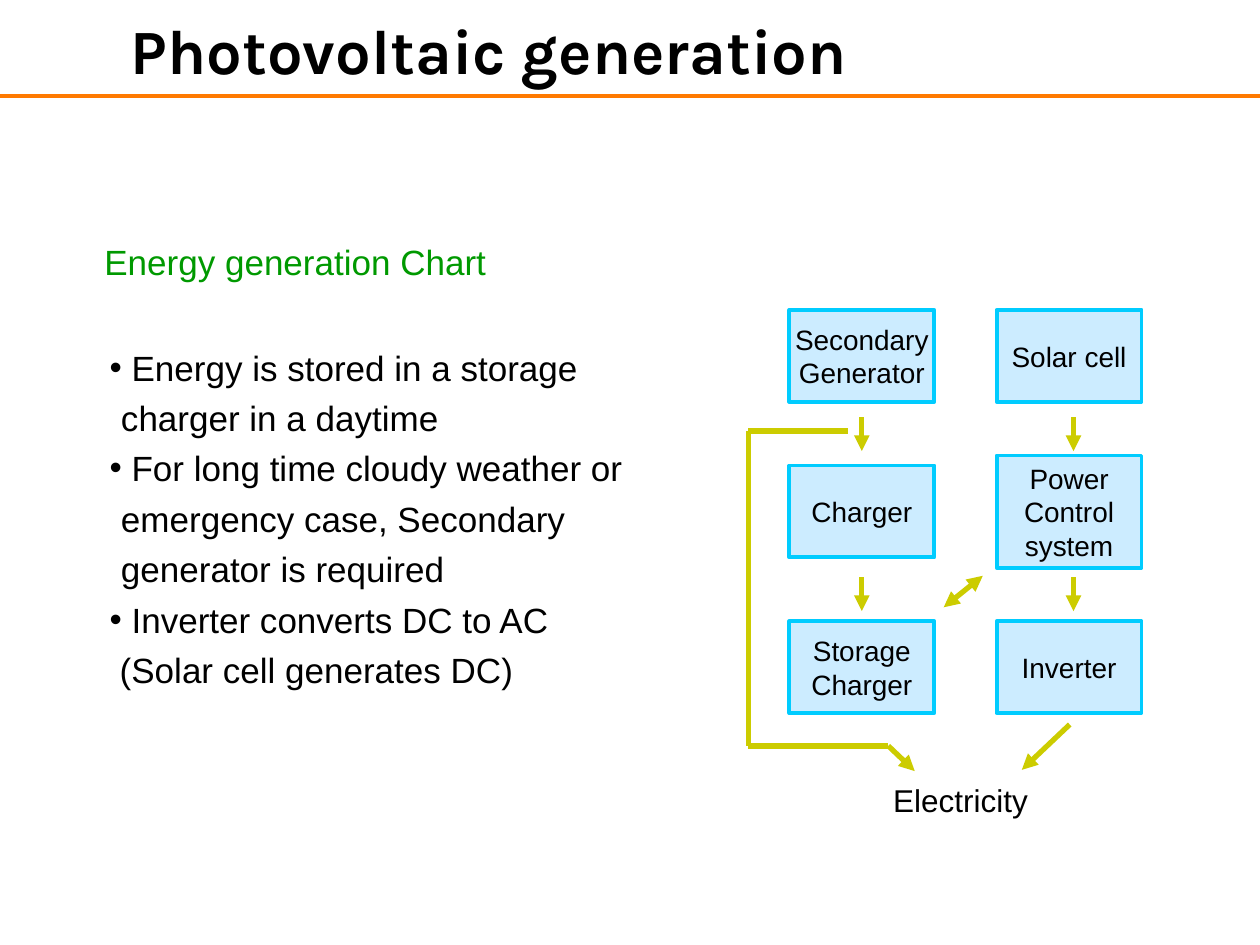
from dataclasses import dataclass

from lxml import etree
from pptx import Presentation
from pptx.dml.color import RGBColor
from pptx.enum.shapes import MSO_CONNECTOR, MSO_SHAPE
from pptx.enum.text import MSO_ANCHOR, MSO_AUTO_SIZE, PP_ALIGN
from pptx.oxml.ns import qn
from pptx.util import Inches, Pt

STRAIGHT = MSO_CONNECTOR.STRAIGHT
RECTANGLE = MSO_SHAPE.RECTANGLE
MIDDLE, TOP = MSO_ANCHOR.MIDDLE, MSO_ANCHOR.TOP
CENTER, LEFT = PP_ALIGN.CENTER, PP_ALIGN.LEFT
NO_FIT = MSO_AUTO_SIZE.NONE


@dataclass(frozen=True)
class Theme:
    title_font: str = "Karla"
    font: str = "Arial"
    text: str = "000000"
    heading: str = "009900"
    rule: str = "FF7A00"
    node_fill: str = "CCECFF"
    node_line: str = "00CCFF"
    arrow: str = "CCCC00"
    title_size: float = 36
    body_size: float = 20
    result_size: float = 18
    node_size: float = 16


THEME = Theme()


def place(shape, box):
    shape.left, shape.top, shape.width, shape.height = map(Inches, box)


def style(para, size, color=THEME.text, font=THEME.font, bold=False, align=LEFT):
    para.alignment = align
    para.font.name, para.font.size, para.font.bold = font, Pt(size), bold
    para.font.color.rgb = RGBColor.from_string(color)


def add_line(page, start, end, color, width, ends=()):
    """Straight line; ends may hold headEnd and tailEnd for arrowheads."""
    line = page.shapes.add_connector(STRAIGHT, *map(Inches, (*start, *end)))
    line.line.color.rgb = RGBColor.from_string(color)
    line.line.width = Pt(width)
    for end_name in ends:
        etree.SubElement(line.line._get_or_add_ln(), qn(f"a:{end_name}"), type="triangle")
    etree.SubElement(line._element.spPr, qn("a:effectLst"))


def add_title(page, box, page_width):
    left, top, width, height = box
    title = page.shapes.title
    place(title, box)
    frame = title.text_frame
    frame.text = "Photovoltaic generation"
    frame.vertical_anchor, frame.auto_size = MIDDLE, NO_FIT
    style(frame.paragraphs[0], THEME.title_size, font=THEME.title_font, bold=True, align=CENTER)
    rule_y = top + height - 0.03
    add_line(page, (0, rule_y), (page_width, rule_y), THEME.rule, 2)


def add_notes_column(page, box):
    left, top, width, height = box

    # Heading
    heading = page.shapes.add_textbox(*map(Inches, (left - 0.04, top, width, 0.6)))
    frame = heading.text_frame
    frame.word_wrap = True
    frame.text = "Energy generation Chart"
    para = frame.paragraphs[0]
    para.line_spacing = 1.5
    style(para, THEME.body_size, THEME.heading)

    # List: each bullet hangs, the closing remark is only indented
    body = page.placeholders[1]
    place(body, (left, top + 0.94, width, height - 0.94))
    frame = body.text_frame
    frame.vertical_anchor, frame.auto_size = TOP, NO_FIT
    bullets = (
        " Energy is stored in a storage charger in a daytime",
        " For long time cloudy weather or emergency case, Secondary generator is required",
        " Inverter converts DC to AC",
    )
    remark = "(Solar cell generates DC)"
    frame.text = "\n".join((*bullets, remark))
    for para in frame.paragraphs:
        is_remark = para.text == remark
        properties = para._p.get_or_add_pPr()
        properties.set("marL", str(Inches(0.08 if is_remark else 0.09)))
        properties.set("indent", str(Inches(0 if is_remark else -0.09)))
        para.line_spacing, para.space_before = 1.2, Pt(0)
        if is_remark:
            etree.SubElement(properties, qn("a:buNone"))
        else:
            etree.SubElement(properties, qn("a:buFont"), typeface=THEME.font)
            etree.SubElement(properties, qn("a:buChar"), char="•")
        style(para, THEME.body_size)


def add_node(page, center, size, text):
    width, height = size
    left, top = center[0] - width / 2, center[1] - height / 2
    node = page.shapes.add_shape(RECTANGLE, *map(Inches, (left, top, width, height)))
    node.shadow.inherit = False
    node.fill.solid()
    node.fill.fore_color.rgb = RGBColor.from_string(THEME.node_fill)
    node.line.color.rgb = RGBColor.from_string(THEME.node_line)
    node.line.width = Pt(2.25)
    frame = node.text_frame
    frame.word_wrap, frame.vertical_anchor = False, MIDDLE
    frame.text = text
    for para in frame.paragraphs:
        style(para, THEME.node_size, align=CENTER)


def add_flow_chart(page, box):
    left, top, width, height = box
    node_width, node_height, row_pitch = 1.15, 0.73, 1.235
    columns = (left + 0.92, left + width - node_width / 2)
    rows = [top + node_height / 2 + row * row_pitch for row in range(3)]

    def arrow(start, end, ends=("tailEnd",)):
        points = [(left + x, top + y) for x, y in (start, end)]
        add_line(page, *points, THEME.arrow, 3, ends)

    # Nodes, column by column
    labels = (
        ("Secondary\nGenerator", "Charger", "Storage\nCharger"),
        ("Solar cell", "Power\nControl\nsystem", "Inverter"),
    )
    for x, column in zip(columns, labels):
        for y, label in zip(rows, column):
            tall = 0.16 if label.count("\n") == 2 else 0
            add_node(page, (x, y), (node_width, node_height + tall), label)

    # Result label
    result = page.shapes.add_textbox(*map(Inches, (left + 1.07, top + height - 0.4, 1.27, 0.4)))
    result.text_frame.word_wrap = False
    result.text_frame.text = "Electricity"
    style(result.text_frame.paragraphs[0], THEME.result_size)

    # Downward arrows between the rows
    for x in (0.92, 2.6):
        for y in (0.85, 2.12):
            arrow((x, y), (x, y + 0.27))

    # Exchange between storage and control, and inverter output
    arrow((1.57, 2.36), (1.88, 2.11), ("headEnd", "tailEnd"))
    arrow((2.57, 3.29), (2.19, 3.65))

    # Bypass from the secondary generator to the result
    bypass = ((0.81, 0.96), (0.02, 0.96), (0.02, 3.46), (1.13, 3.46), (1.34, 3.66))
    for start, end in zip(bypass, bypass[1:]):
        arrow(start, end, ("tailEnd",) if end == bypass[-1] else ())


def main():
    deck = Presentation()
    page_width, page_height = 10, 7.5
    deck.slide_width, deck.slide_height = Inches(page_width), Inches(page_height)
    page = deck.slides.add_slide(deck.slide_layouts[1])
    add_title(page, (0, 0, 7.76, 0.79), page_width)
    add_notes_column(page, (0.77, 1.69, 4.48, 3.84))
    add_flow_chart(page, (5.92, 2.46, 3.14, 4.09))
    deck.save("out.pptx")


if __name__ == "__main__":
    main()
